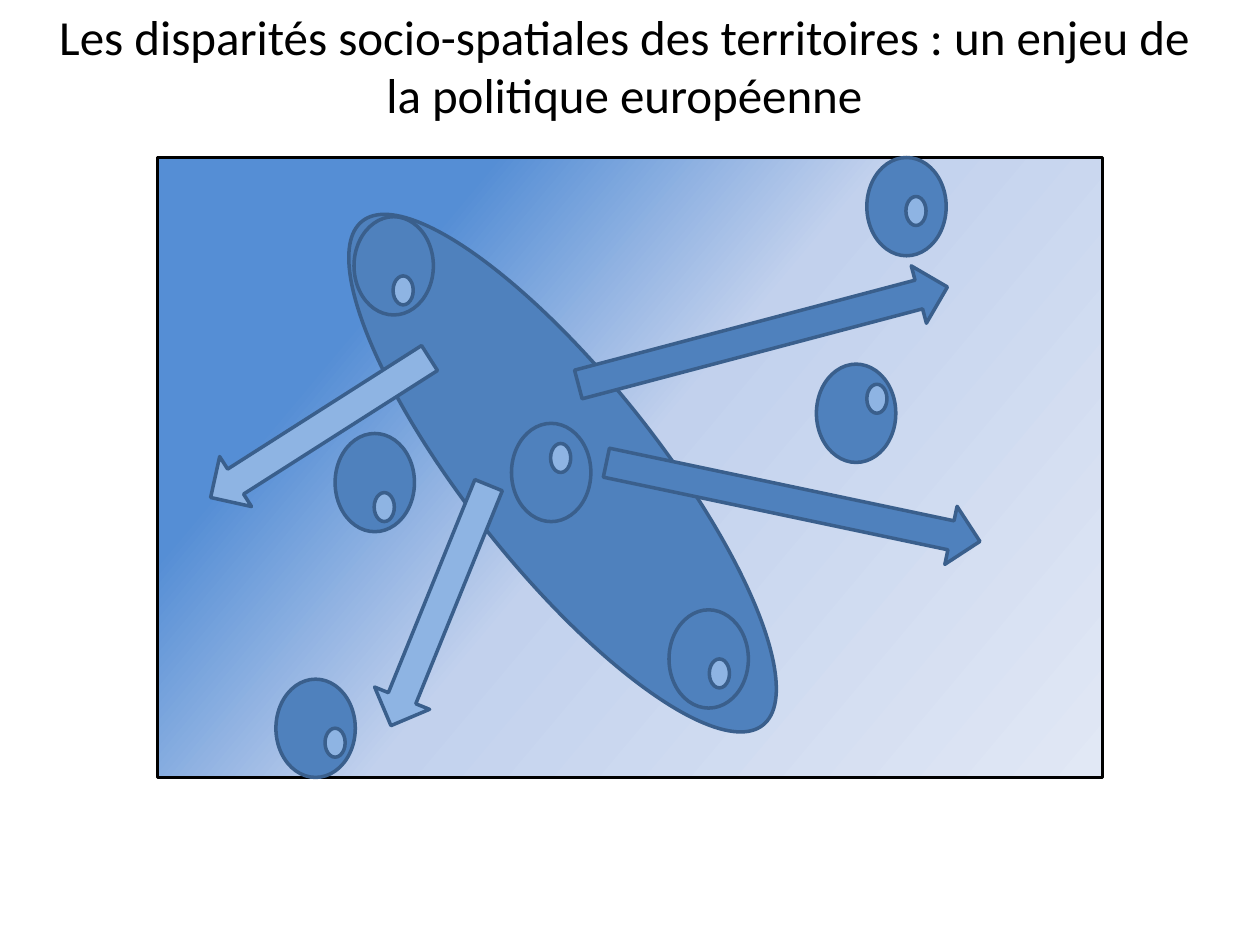
import copy

import pptx
import pptx.dml.color
import pptx.enum.shapes
import pptx.enum.text
import pptx.oxml.ns
import pptx.util

Inches = pptx.util.Inches
Pt = pptx.util.Pt
RGB = pptx.dml.color.RGBColor.from_string
SHAPES = pptx.enum.shapes.MSO_SHAPE

COLORS = {
    "blue": "4F81BD",
    "light": "8EB4E3",
    "outline": "3A5F8C",
    "black": "000000",
    "west": "558ED5",
    "middle": "C2D1ED",
    "east": "E1E8F5",
}

prs = pptx.Presentation()
prs.slide_width = Inches(10)
prs.slide_height = Inches(7.5)
slide = prs.slides.add_slide(prs.slide_layouts[6])


def add_figure(kind, left, top, width, height, fill="blue", line="outline", rotation=0):
    figure = slide.shapes.add_shape(
        kind, Inches(left), Inches(top), Inches(width), Inches(height)
    )
    figure.shadow.inherit = False
    figure.rotation = rotation
    figure.fill.solid()
    figure.fill.fore_color.rgb = RGB(COLORS[fill])
    figure.line.color.rgb = RGB(COLORS[line])
    figure.line.width = Pt(2)
    return figure


def add_text(text, left, top, width, height, size=28, font="Calibri", color="black",
             align=pptx.enum.text.PP_ALIGN.CENTER):
    box = slide.shapes.add_textbox(
        Inches(left), Inches(top), Inches(width), Inches(height)
    )
    box.text_frame.word_wrap = True
    box.text_frame.auto_size = pptx.enum.text.MSO_AUTO_SIZE.SHAPE_TO_FIT_TEXT
    paragraph = box.text_frame.paragraphs[0]
    paragraph.alignment = align
    run = paragraph.add_run()
    run.text = text
    run.font.size = Pt(size)
    run.font.name = font
    run.font.color.rgb = RGB(COLORS[color])
    return box


territory = add_figure(SHAPES.RECTANGLE, 1.25, 1.25, 7.5, 4.92, line="black")
territory.fill.gradient()
territory.fill.gradient_angle = 320
stop_list = territory.element.spPr.find(".//" + pptx.oxml.ns.qn("a:gsLst"))
stop_list.append(copy.deepcopy(stop_list[-1]))
gradient = [(0.23, "west"), (0.5, "middle"), (1, "east")]
for stop, (position, color) in zip(territory.fill.gradient_stops, gradient):
    stop.position = position
    stop.color.rgb = RGB(COLORS[color])

add_figure(SHAPES.OVAL, 3.71, 1.2, 1.51, 5.11, rotation=321.5)

regions = [
    (2.19, 5.39), (4.06, 3.36), (6.88, 1.25), (6.48, 2.89),
    (5.31, 4.84), (2.81, 1.72), (2.66, 3.44),
]
for left, top in regions:
    add_figure(SHAPES.OVAL, left, top, 0.63, 0.78)

centres = [
    (4.37, 3.52), (5.63, 5.23), (3.12, 2.19), (6.88, 3.05),
    (7.19, 1.56), (2.97, 3.91), (2.58, 5.78),
]
for left, top in centres:
    add_figure(SHAPES.OVAL, left, top, 0.16, 0.23, fill="light")

flows = [
    (2.46, 4.57, 2.06, 112.1, "light"),
    (1.51, 3.16, 2.06, 147.5, "light"),
    (4.78, 3.75, 3.03, 11.9, "blue"),
    (4.54, 2.43, 3.03, 345.2, "blue"),
]
for left, top, length, rotation, color in flows:
    add_figure(SHAPES.RIGHT_ARROW, left, top, length, 0.47, fill=color, rotation=rotation)

add_text(
    "Les disparités socio-spatiales des territoires : un enjeu de la politique européenne",
    0.23, 0, 9.45, 1.04,
)

prs.save("out.pptx")
